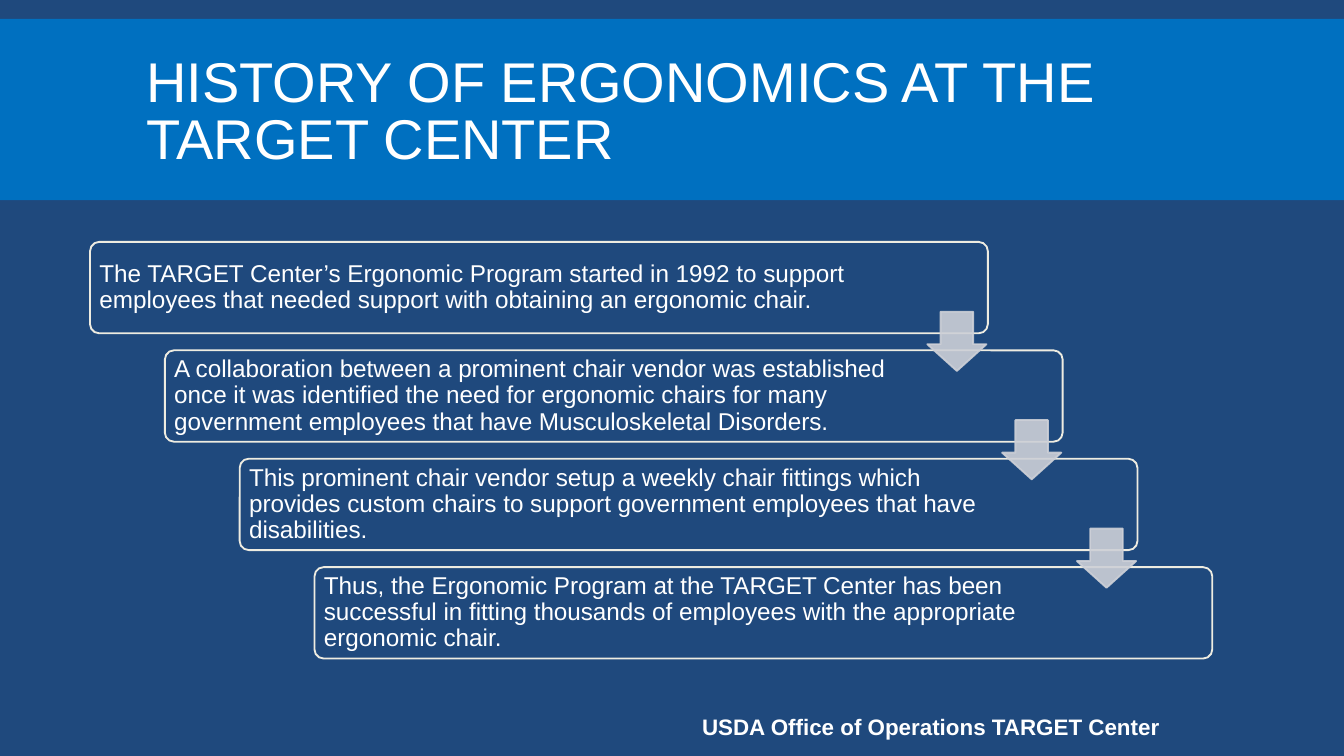
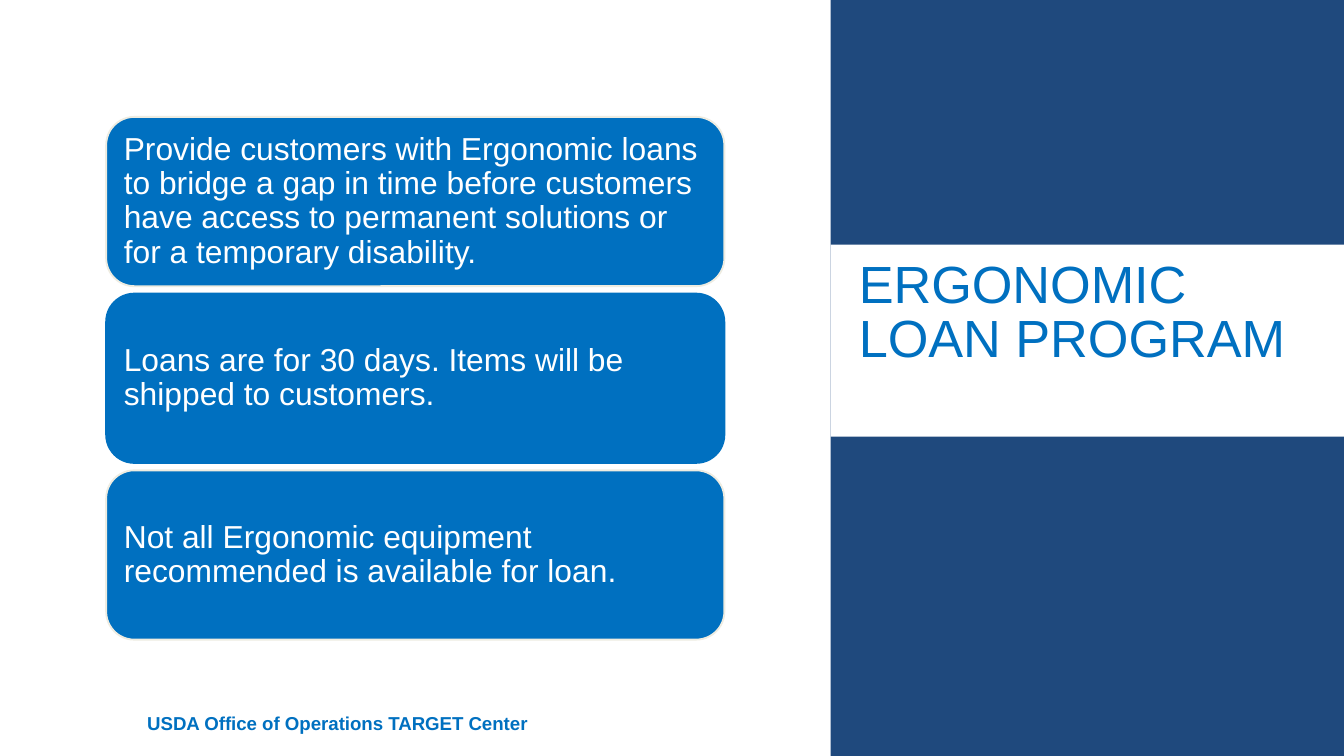
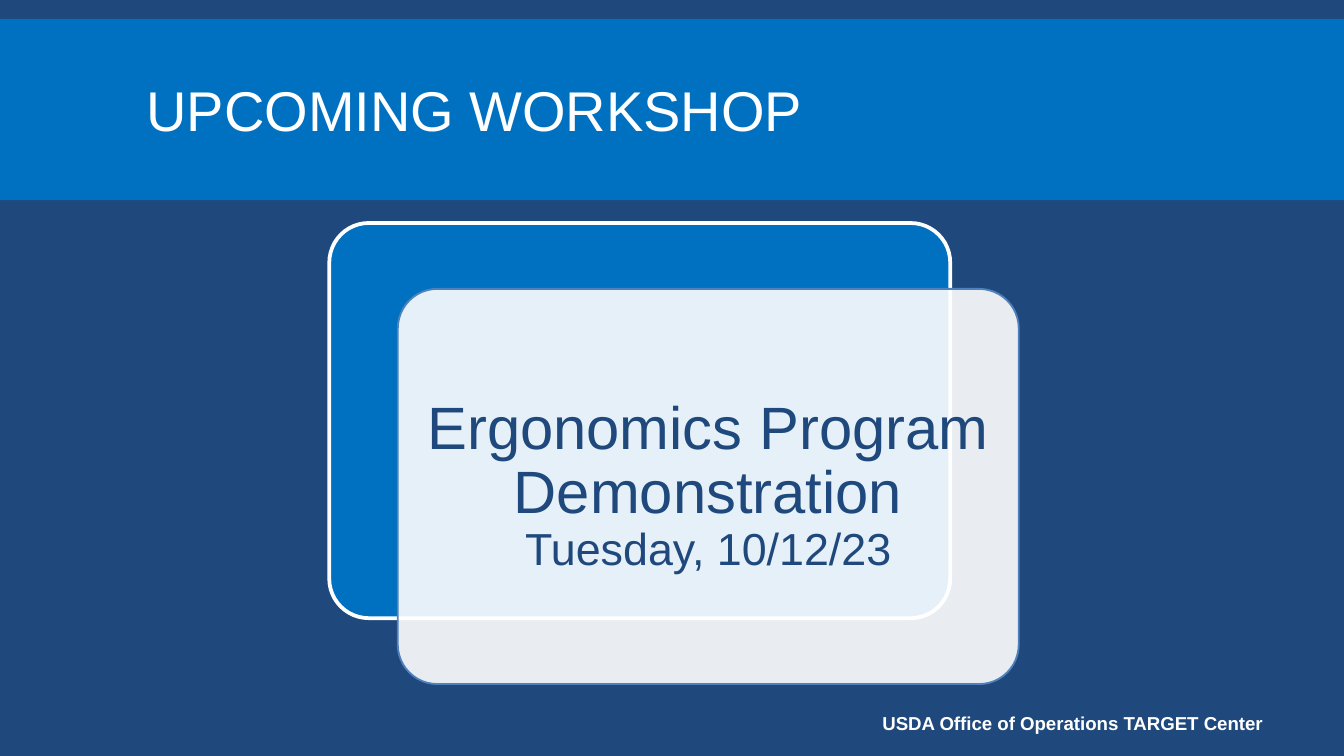
from dataclasses import dataclass
from typing import Optional

from lxml.etree import SubElement
from pptx import Presentation
from pptx.dml.color import RGBColor
from pptx.enum.shapes import MSO_SHAPE
from pptx.enum.text import MSO_ANCHOR, MSO_AUTO_SIZE, PP_ALIGN
from pptx.oxml.ns import qn
from pptx.util import Inches, Pt

FONT = "Arial"
COLORS = {
    "navy": "1F497D",
    "blue": "0070C0",
    "white": "FFFFFF",
    "cream": "EEECE1",
    "silver": "CDD0D7",
    "steel": "4F81BD",
}
FOOTER = "USDA Office of Operations TARGET Center"
TITLE_ONLY = 5


@dataclass(frozen=True)
class Box:
    left: float
    top: float
    width: float
    height: float

    def inches(self) -> tuple:
        return tuple(Inches(v) for v in (self.left, self.top, self.width, self.height))


@dataclass(frozen=True)
class Panel:
    """Look of a preset shape."""
    kind: MSO_SHAPE
    fill: str
    line: Optional[str] = None
    line_width: float = 1
    adjustments: tuple = ()
    fill_opacity: int = 100
    line_opacity: int = 100


@dataclass(frozen=True)
class Step:
    text: str
    right_inset: float = 1.06


# Shared layout
WIDTH = 10
HEIGHT = WIDTH * 9 / 16
BAND = Box(0, 0.14, WIDTH, 1.35)
BAND_TITLE = Box(0.99, 0.23, 8.03, 1.24)
BAND_PANEL = Panel(MSO_SHAPE.RECTANGLE, "blue")

# Content
HISTORY = [
    Step("The TARGET Center’s Ergonomic Program started in 1992 to support employees "
         "that needed support with obtaining an ergonomic chair.", 0.81),
    Step("A collaboration between a prominent chair vendor was established once it was "
         "identified the need for ergonomic chairs for many government employees that "
         "have Musculoskeletal Disorders."),
    Step("This prominent chair vendor setup a weekly chair fittings which provides custom "
         "chairs to support government employees that have disabilities."),
    Step("Thus, the Ergonomic Program at the TARGET Center has been successful in fitting "
         "thousands of employees with the appropriate ergonomic chair."),
]
LOAN_RULES = [
    ("Provide customers with Ergonomic loans to bridge a gap in time before customers "
     "have access to permanent solutions or for a temporary disability.", "cream"),
    ("Loans are for 30 days. Items will be shipped to customers.", "blue"),
    ("Not all Ergonomic equipment recommended is available for loan.", "cream"),
]


def rgb(color: str) -> RGBColor:
    return RGBColor.from_string(COLORS[color])


def set_opacity(color_parent, percent: int) -> None:
    if percent < 100:
        color = next(color_parent.iter(qn("a:srgbClr")))
        SubElement(color, qn("a:alpha")).set("val", str(percent * 1000))


def write_text(frame, text: str, *, size: float, color: str = "white", bold: bool = False,
               align: PP_ALIGN = PP_ALIGN.LEFT, spacing: float = 0.9,
               insets: tuple = (0.1, 0.05, 0.1, 0.05)) -> None:
    """Append a run to the first paragraph and format its frame."""
    frame.word_wrap = True
    frame.auto_size = MSO_AUTO_SIZE.NONE
    frame.vertical_anchor = MSO_ANCHOR.MIDDLE
    (frame.margin_left, frame.margin_top,
     frame.margin_right, frame.margin_bottom) = (Inches(v) for v in insets)
    paragraph = frame.paragraphs[0]
    paragraph.alignment = align
    paragraph.line_spacing = spacing
    run = paragraph.add_run()
    run.text = text
    run.font.name = FONT
    run.font.size = Pt(size)
    run.font.bold = bold
    run.font.color.rgb = rgb(color)


def add_panel(slide, box: Box, panel: Panel):
    shape = slide.shapes.add_shape(panel.kind, *box.inches())
    shape.shadow.inherit = False
    for index, value in enumerate(panel.adjustments):
        shape.adjustments[index] = value
    shape.fill.solid()
    shape.fill.fore_color.rgb = rgb(panel.fill)
    set_opacity(shape._element.spPr.find(qn("a:solidFill")), panel.fill_opacity)
    if panel.line is None:
        shape.line.fill.background()
    else:
        shape.line.color.rgb = rgb(panel.line)
        shape.line.width = Pt(panel.line_width)
        set_opacity(shape._element.spPr.find(qn("a:ln")), panel.line_opacity)
    return shape


def add_backdrop(slide, box: Box, panel: Panel) -> None:
    """Add a panel just behind the title."""
    backdrop = add_panel(slide, box, panel)
    slide.shapes.title._element.addprevious(backdrop._element)


def add_slide(deck, background: str):
    slide = deck.slides.add_slide(deck.slide_layouts[TITLE_ONLY])
    slide.background.fill.solid()
    slide.background.fill.fore_color.rgb = rgb(background)
    return slide


def place_title(slide, text: str, box: Box, **text_format) -> None:
    title = slide.shapes.title
    title.left, title.top, title.width, title.height = box.inches()
    write_text(title.text_frame, text, spacing=0.85, **text_format)


def add_band_slide(deck, title: str):
    slide = add_slide(deck, "navy")
    add_backdrop(slide, BAND, BAND_PANEL)
    place_title(slide, title, BAND_TITLE, size=30)
    return slide


def add_footer(slide, box: Box, **text_format) -> None:
    footer = slide.shapes.add_textbox(*box.inches())
    write_text(footer.text_frame, FOOTER, bold=True, **text_format)


def build_history(deck) -> None:
    slide = add_band_slide(deck, "HISTORY OF ERGONOMICS AT THE TARGET CENTER")
    add_footer(slide, Box(4.59, 5.27, 4.14, 0.3), size=12, align=PP_ALIGN.RIGHT)
    card = Panel(MSO_SHAPE.ROUNDED_RECTANGLE, "navy", "cream", adjustments=(0.1,))
    arrow = Panel(MSO_SHAPE.DOWN_ARROW, "silver", "silver", adjustments=(0.55, 0.45),
                  fill_opacity=90, line_opacity=90)

    # Staircase of steps, from the first corner to the last
    gaps = len(HISTORY) - 1
    corners = [(0.67 + 1.67 * i / gaps, 1.8 + 2.42 * i / gaps) for i in range(gaps + 1)]
    for step, (left, top) in zip(HISTORY, corners):
        shape = add_panel(slide, Box(left, top, 6.68, 0.68), card)
        write_text(shape.text_frame, step.text, size=13,
                   insets=(0.05, 0.05, step.right_inset, 0.05))
    for left, top in corners[:-1]:
        add_panel(slide, Box(left + 6.23, top + 0.52, 0.44, 0.44), arrow)


def build_loans(deck) -> None:
    slide = add_slide(deck, "white")

    # Side column with a white strip for the title
    side = 6.18
    for top, height, fill in ((0, HEIGHT, "navy"), (1.82, 1.43, "white")):
        add_backdrop(slide, Box(side, top, WIDTH - side, height),
                     Panel(MSO_SHAPE.RECTANGLE, fill))
    place_title(slide, "ERGONOMIC LOAN PROGRAM", Box(6.29, 1.92, 3.39, 1.24),
                size=28, color="blue", insets=(0.1, 0.05, 0.1, 0.45))

    # Loan rules
    pitch = 2.63 / (len(LOAN_RULES) - 1)
    for index, (text, outline) in enumerate(LOAN_RULES):
        rule = add_panel(slide, Box(0.79, 0.87 + pitch * index, 4.6, 1.26),
                         Panel(MSO_SHAPE.ROUNDED_RECTANGLE, "blue", outline))
        write_text(rule.text_frame, text, size=17, insets=(0.07,) * 4)
    add_footer(slide, Box(0.33, 5.24, 4.36, 0.3), size=10, color="blue",
               align=PP_ALIGN.CENTER)


def build_workshop(deck) -> None:
    slide = add_band_slide(deck, "UPCOMING WORKSHOP")
    add_panel(slide, Box(2.45, 1.66, 4.62, 2.94),
              Panel(MSO_SHAPE.ROUNDED_RECTANGLE, "blue", "white", 2, (0.1,)))
    event = add_panel(slide, Box(2.96, 2.15, 4.62, 2.94),
                      Panel(MSO_SHAPE.ROUNDED_RECTANGLE, "white", "steel",
                            adjustments=(0.1,), fill_opacity=90))
    for text, size in (("Ergonomics Program Demonstration ", 32), ("Tuesday, 10/12/23", 24)):
        write_text(event.text_frame, text, size=size, color="navy",
                   align=PP_ALIGN.CENTER, insets=(0.13,) * 4)
    add_footer(slide, Box(5.8, 5.24, 4.36, 0.3), size=10, align=PP_ALIGN.CENTER)


def main() -> None:
    deck = Presentation()
    deck.slide_width, deck.slide_height = Inches(WIDTH), Inches(HEIGHT)
    build_history(deck)
    build_loans(deck)
    build_workshop(deck)
    deck.save("out.pptx")


if __name__ == "__main__":
    main()
